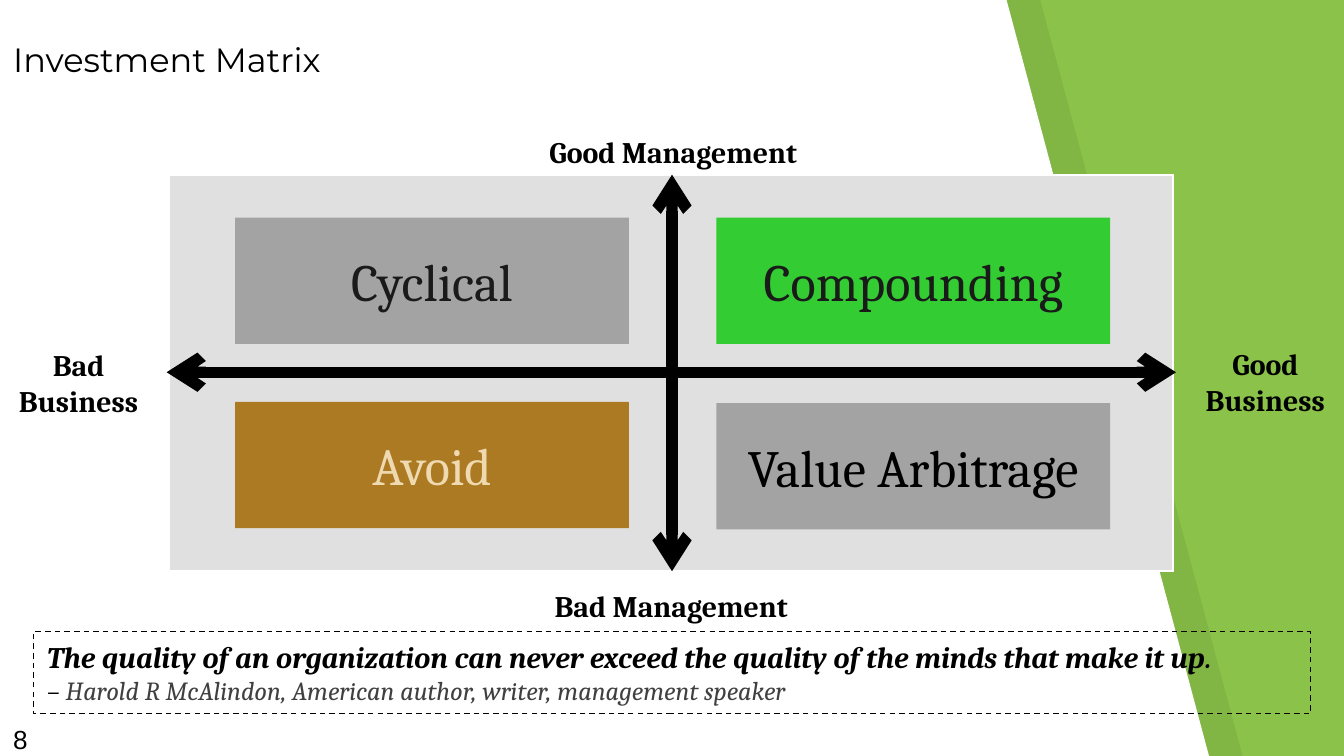
"""Build the Investment Matrix slide: a two-by-two grid of business against management."""
from lxml.etree import SubElement
from pptx import Presentation
from pptx.dml.color import RGBColor
from pptx.enum.dml import MSO_LINE
from pptx.enum.shapes import MSO_CONNECTOR, MSO_SHAPE
from pptx.enum.text import MSO_ANCHOR as ANCHOR, MSO_AUTO_SIZE, PP_ALIGN as ALIGN
from pptx.oxml.ns import qn
from pptx.util import Inches, Pt

COLORS = {
    "green": "8BC34A", "black": "000000", "white": "FFFFFF", "panel": "E0E0E0",
    "gray": "A3A3A3", "brown": "AB7A22", "lime": "33CC33", "charcoal": "1A1A1A",
    "cream": "EFD9B0", "slate": "404040",
}
SERIF = "Cambria"


def rgb(name):
    return RGBColor.from_string(COLORS[name])


def paint(fill, color):
    fill.solid()
    fill.fore_color.rgb = rgb(color)


def style(span, size, color="black", font=SERIF, bold=False, italic=False):
    span.font.name = font
    span.font.size = Pt(size)
    span.font.bold = bold
    span.font.italic = italic
    span.font.color.rgb = rgb(color)


def write(shape, text, size, color="black", font=SERIF, bold=False,
          align=ALIGN.CENTER, anchor=ANCHOR.MIDDLE):
    frame = shape.text_frame
    frame.word_wrap = True
    frame.vertical_anchor = anchor
    frame.text = text
    para = frame.paragraphs[0]
    para.alignment = align
    style(para.runs[0], size, color, font, bold)
    return frame


def add_text(page, place, text, size, **options):
    box = page.shapes.add_textbox(*map(Inches, place))
    return write(box, text, size, **options)


def add_rectangle(page, place):
    box = page.shapes.add_shape(MSO_SHAPE.RECTANGLE, *map(Inches, place))
    box.shadow.inherit = False
    return box


def add_slanted_panel(page, left, color, opacity=None):
    corners = [(0, -0.01), (0, 5.64), (9, 5.64), (7.49, 0)]
    points = [(Inches(left + x), Inches(y)) for x, y in corners]
    builder = page.shapes.build_freeform(*points[0])
    builder.add_line_segments(points[1:], close=True)
    panel = builder.convert_to_shape()
    panel.shadow.inherit = False
    panel.line.fill.background()
    paint(panel.fill, color)
    if opacity is not None:
        tint = panel._element.spPr.find(qn("a:solidFill"))[0]
        SubElement(tint, qn("a:alpha"), val=str(opacity * 1000))


def add_matrix(page):
    place = map(Inches, (1.26, 1.3, 7.47, 2.95))
    table = page.shapes.add_table(2, 2, *place).table
    for cell in table.iter_cells():
        paint(cell.fill, "panel")


def add_axis(page, start, end):
    axis = page.shapes.add_connector(MSO_CONNECTOR.STRAIGHT, *map(Inches, start + end))
    axis.line.color.rgb = rgb("black")
    axis.line.width = Pt(6)
    outline = axis.line._get_or_add_ln()
    for tag in ("a:headEnd", "a:tailEnd"):
        SubElement(outline, qn(tag), type="arrow")
    SubElement(axis._element.spPr, qn("a:effectLst"))


def add_quadrant(page, left, top, text, fill, color):
    box = add_rectangle(page, (left, top, 2.93, 0.94))
    paint(box.fill, fill)
    box.line.fill.background()
    write(box, text, 28, color)


def add_quote(page):
    box = add_rectangle(page, (0.25, 4.7, 9.5, 0.61))
    box.fill.background()
    box.line.color.rgb = rgb("black")
    box.line.width = Pt(0.75)
    box.line.dash_style = MSO_LINE.DASH
    frame = box.text_frame
    frame.word_wrap = True
    frame.vertical_anchor = ANCHOR.TOP
    lines = [
        [("The quality of an organization can never exceed the quality of the minds "
          "that make it up", 16, "black", True), (".", 14, "black", True)],
        [("– ", 14, "black", False),
         ("Harold R McAlindon, American author, writer, management speaker",
          14, "slate", False)],
    ]
    for para, spans in zip((frame.paragraphs[0], frame.add_paragraph()), lines):
        para.alignment = ALIGN.LEFT
        for text, size, color, bold in spans:
            span = para.add_run()
            span.text = text
            style(span, size, color, bold=bold, italic=True)


def main():
    deck = Presentation()
    deck.slide_width = Inches(10)
    deck.slide_height = deck.slide_width * 9 // 16
    page = deck.slides.add_slide(deck.slide_layouts[6])
    paint(page.background.fill, "green")
    add_slanted_panel(page, 0.25, "black", opacity=7)
    add_slanted_panel(page, 0, "white")

    title = add_text(page, (0, 0.23, 6.67, 0.46), "Investment Matrix", 18,
                     font="Montserrat", align=ALIGN.LEFT, anchor=ANCHOR.BOTTOM)
    title.margin_top = title.margin_bottom = Inches(0.1)
    add_text(page, (0, 5.33, 1.42, 0.3), "8", 14,
             font="Arial", align=ALIGN.LEFT, anchor=ANCHOR.TOP)

    add_matrix(page)
    add_axis(page, (1.24, 2.77), (8.75, 2.77))
    add_axis(page, (5, 4.25), (5, 1.3))

    quadrants = [
        (1.75, 1.62, "Cyclical", "gray", "charcoal"),
        (1.75, 2.99, "Avoid", "brown", "cream"),
        (5.33, 1.62, "Compounding", "lime", "charcoal"),
        (5.33, 3, "Value Arbitrage", "gray", "black"),
    ]
    for quadrant in quadrants:
        add_quadrant(page, *quadrant)

    axis_labels = [
        ("Bad Business", (0, 2.53, 1.17, 0.64)),
        ("Bad Management", (3.83, 4.32, 2.33, 0.37)),
        ("Good Business", (8.83, 2.52, 1.17, 0.64)),
        ("Good Management", (3.8, 0.94, 2.42, 0.37)),
    ]
    for text, place in axis_labels:
        frame = add_text(page, place, text, 16, bold=True)
        frame.auto_size = MSO_AUTO_SIZE.SHAPE_TO_FIT_TEXT

    add_quote(page)
    deck.save("out.pptx")


if __name__ == "__main__":
    main()
